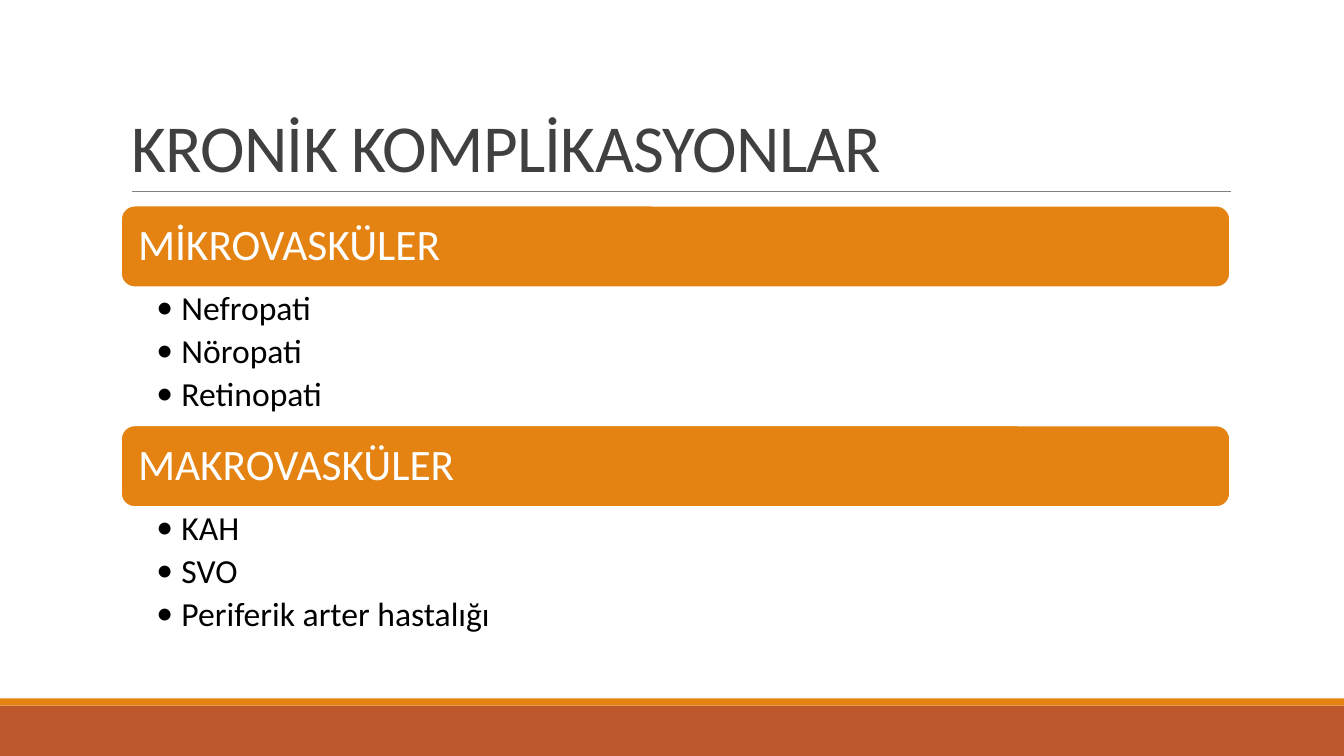
from lxml import etree
from pptx import Presentation
from pptx.dml.color import RGBColor
from pptx.enum.shapes import MSO_CONNECTOR, MSO_SHAPE
from pptx.enum.text import MSO_ANCHOR, MSO_AUTO_SIZE, PP_ALIGN
from pptx.oxml.ns import qn
from pptx.util import Inches, Pt

RECT = MSO_SHAPE.RECTANGLE
ROUNDED = MSO_SHAPE.ROUNDED_RECTANGLE
STRAIGHT = MSO_CONNECTOR.STRAIGHT
MIDDLE, TOP, BOTTOM = MSO_ANCHOR.MIDDLE, MSO_ANCHOR.TOP, MSO_ANCHOR.BOTTOM
LEFT = PP_ALIGN.LEFT
NO_FIT = MSO_AUTO_SIZE.NONE

ORANGE = RGBColor(0xE4, 0x83, 0x12)
RUST = RGBColor(0xBD, 0x58, 0x2C)
GRAY = RGBColor(0x80, 0x80, 0x80)
DARK = RGBColor(0x40, 0x40, 0x40)
WHITE = RGBColor(0xFF, 0xFF, 0xFF)
BLACK = RGBColor(0, 0, 0)

FONT = "Calibri"
CONTENT_LEFT, CONTENT_WIDTH = 1.2, 11
FIRST_TOP, HEADING_HEIGHT, LIST_HEIGHT = 2.04, 0.81, 1.37
SECTIONS = [
    ("MİKROVASKÜLER", ["Nefropati", "Nöropati", "Retinopati"]),
    ("MAKROVASKÜLER", ["KAH", "SVO", "Periferik arter hastalığı"]),
]


def place(s, left, top, width, height):
    s.left, s.top = Inches(left), Inches(top)
    s.width, s.height = Inches(width), Inches(height)


def set_frame(tf, anchor, left, top, right, bottom):
    tf.word_wrap = True
    tf.auto_size = NO_FIT
    tf.vertical_anchor = anchor
    tf.margin_left, tf.margin_top = Inches(left), Inches(top)
    tf.margin_right, tf.margin_bottom = Inches(right), Inches(bottom)


def add_text(p, text, size, color, spacing=0.9, after=0):
    p.alignment = LEFT
    p.line_spacing = spacing
    p.space_before = Pt(0)
    p.space_after = Pt(after)
    r = p.add_run()
    r.text = text
    r.font.name = FONT
    r.font.size = Pt(size)
    r.font.color.rgb = color
    return r


def add_bullet(p):
    pPr = p._p.get_or_add_pPr()
    pPr.set("marL", str(Inches(0.25)))
    pPr.set("indent", str(Inches(-0.25)))
    etree.SubElement(pPr, qn("a:buFont")).set("typeface", FONT)
    etree.SubElement(pPr, qn("a:buChar")).set("char", "•")


def add_box(slide, kind, left, top, width, height, fill):
    s = slide.shapes.add_shape(kind, Inches(left), Inches(top), Inches(width), Inches(height))
    s.shadow.inherit = False
    s.fill.solid()
    s.fill.fore_color.rgb = fill
    s.line.fill.background()
    return s


def add_rule(slide, left, right, y):
    line = slide.shapes.add_connector(STRAIGHT, Inches(left), Inches(y), Inches(right), Inches(y))
    line.line.color.rgb = GRAY
    line.line.width = Pt(0.5)
    etree.SubElement(line._element.spPr, qn("a:effectLst"))


def fill_title(title, text):
    place(title, CONTENT_LEFT, 0.31, CONTENT_WIDTH, 1.59)
    set_frame(title.text_frame, BOTTOM, 0.1, 0.05, 0.1, 0.05)
    r = add_text(title.text_frame.paragraphs[0], text, 48, DARK, spacing=0.85)
    r.font._element.set("spc", "-50")


def add_heading(slide, text, top):
    s = add_box(slide, ROUNDED, CONTENT_LEFT, top, CONTENT_WIDTH, HEADING_HEIGHT, ORANGE)
    s.line.color.rgb = WHITE
    s.line.width = Pt(1.25)
    set_frame(s.text_frame, MIDDLE, 0.13, 0.13, 0.13, 0.13)
    add_text(s.text_frame.paragraphs[0], text, 31, WHITE)


def fill_list(body, items, top):
    place(body, CONTENT_LEFT, top, CONTENT_WIDTH, LIST_HEIGHT)
    tf = body.text_frame
    set_frame(tf, TOP, 0.35, 0.04, 0.24, 0.04)
    for i, item in enumerate(items):
        p = tf.add_paragraph() if i else tf.paragraphs[0]
        p.level = 1
        add_text(p, item, 24, BLACK, after=4.8)
        add_bullet(p)


def main():
    prs = Presentation()
    prs.slide_width, prs.slide_height = Inches(13.33), Inches(7.5)
    slide = prs.slides.add_slide(prs.slide_layouts.get_by_name("Two Content"))
    title, *bodies = slide.placeholders

    add_box(slide, RECT, 0, 7, 13.33, 0.5, RUST)
    add_box(slide, RECT, 0, 6.93, 13.33, 0.07, ORANGE)
    add_rule(slide, 1.31, 12.21, 1.9)
    fill_title(title, "KRONİK KOMPLİKASYONLAR")

    for i, (body, (heading, items)) in enumerate(zip(bodies, SECTIONS)):
        top = FIRST_TOP + i * (HEADING_HEIGHT + LIST_HEIGHT)
        add_heading(slide, heading, top)
        fill_list(body, items, top + HEADING_HEIGHT)

    prs.save("out.pptx")


if __name__ == "__main__":
    main()
